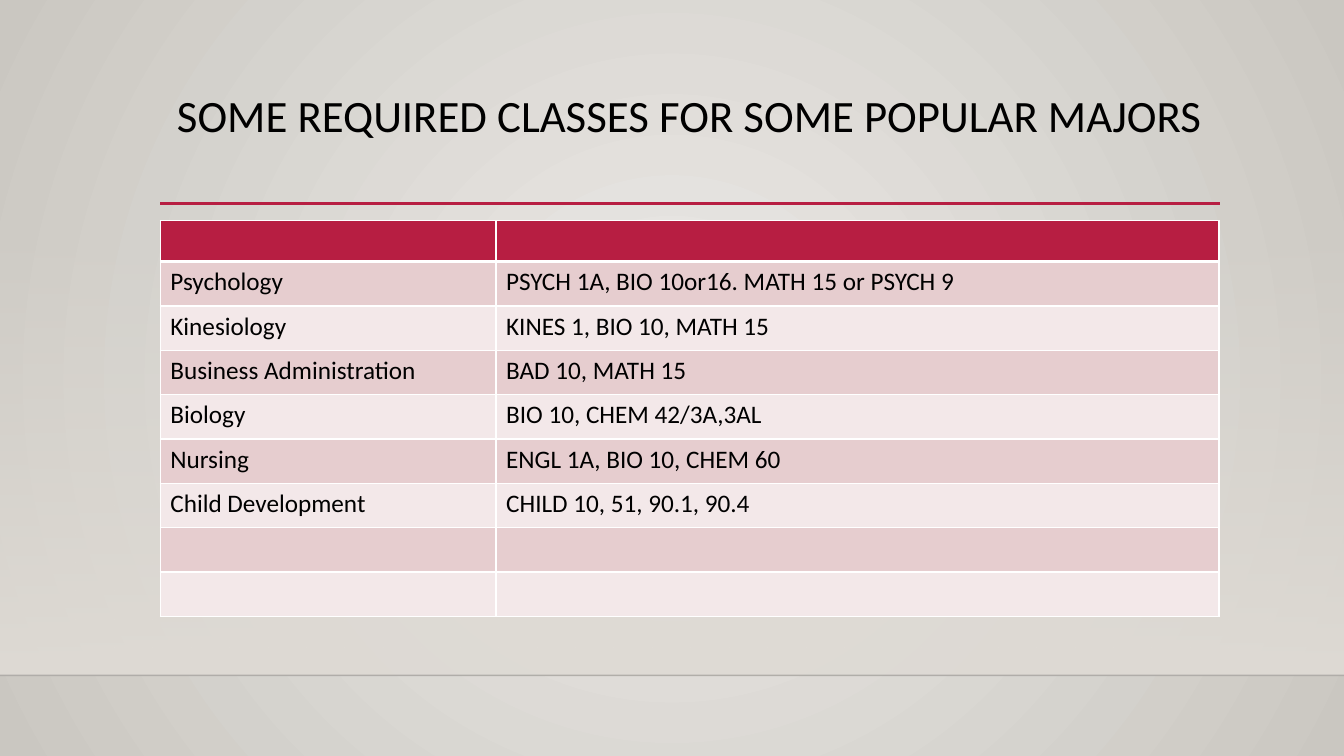
from lxml import etree
from pptx import Presentation
from pptx.dml.color import RGBColor
from pptx.enum import shapes, text
from pptx.oxml import ns
from pptx.util import Inches, Pt

BLACK = RGBColor(0, 0, 0)
INK = RGBColor(0, 0, 1)
WHITE = RGBColor(255, 255, 255)
RED = RGBColor(0xB7, 0x1E, 0x42)
PINK = RGBColor(0xE6, 0xCD, 0xCF)
PALE = RGBColor(0xF3, 0xE8, 0xE9)
SAND = RGBColor(0xDF, 0xDB, 0xD5)
LIGHT = RGBColor(0xEC, 0xEA, 0xE7)
DARK = RGBColor(0xCA, 0xC7, 0xC1)
FONT = {"name": "Calibri", "size": Pt(18), "bold": False}

ROWS = [
    ("", ""),
    ("Psychology", "PSYCH 1A, BIO 10or16. MATH 15 or PSYCH 9"),
    ("Kinesiology", "KINES 1, BIO 10, MATH 15"),
    ("Business Administration", "BAD 10, MATH 15"),
    ("Biology", "BIO 10, CHEM 42/3A,3AL"),
    ("Nursing", "ENGL 1A, BIO 10, CHEM 60"),
    ("Child Development", "CHILD 10, 51, 90.1, 90.4"),
    ("", ""),
    ("", ""),
]


def add(parent, tag, **attrs):
    return etree.SubElement(parent, ns.qn(tag), attrs)


def style(font, color, **more):
    for key, value in {**FONT, **more}.items():
        setattr(font, key, value)
    font.color.rgb = color


prs = Presentation()
prs.slide_width, prs.slide_height = Inches(13.33), Inches(7.5)
slide = prs.slides.add_slide(prs.slide_layouts[5])

# Background: radial gradient
back = slide.background.fill
back.gradient()
for stop, color in zip(back.gradient_stops, (LIGHT, DARK)):
    stop.color.rgb = color
grad = slide.element.find(".//" + ns.qn("a:gradFill"))
grad.remove(grad.find(ns.qn("a:lin")))
ring = add(grad, "a:path", path="circle")
add(ring, "a:fillToRect", l="50000", t="50000", r="50000", b="50000")

# Wall that fades in toward the floor
wall = slide.shapes.add_shape(shapes.MSO_SHAPE.RECTANGLE, 0, Inches(2.21),
                              Inches(13.33), Inches(4.49))
wall.shadow.inherit = False
wall.line.fill.background()
wall.fill.gradient()
wall.fill.gradient_angle = 270
for stop in wall.fill.gradient_stops:
    stop.color.rgb = SAND
add(wall.element.find(".//" + ns.qn("a:srgbClr")), "a:alpha", val="0")

# Floor edge and title rule
for left, right, top, color, width, alpha in [
        (0, 13.33, 6.7, INK, 1, "20000"),
        (1.59, 12.1, 2.02, RED, 2.5, "100000")]:
    rule = slide.shapes.add_connector(
        shapes.MSO_CONNECTOR.STRAIGHT,
        Inches(left), Inches(top), Inches(right), Inches(top))
    rule.line.color.rgb = color
    rule.line.width = Pt(width)
    add(rule.element.find(".//" + ns.qn("a:srgbClr")), "a:alpha", val=alpha)
    add(rule.element.spPr, "a:effectLst")

# Title
title = slide.shapes.title
title.left, title.top = Inches(1.59), Inches(0.88)
title.width, title.height = Inches(10.5), Inches(1.15)
frame = title.text_frame
frame.text = "SOME REQUIRED CLASSES FOR SOME POPULAR MAJORS"
frame.vertical_anchor = text.MSO_ANCHOR.TOP
frame.word_wrap = True
para = frame.paragraphs[0]
para.alignment = text.PP_ALIGN.CENTER
para.line_spacing = 0.9
style(para.runs[0].font, BLACK, size=Pt(32))

# Table of majors and classes
table = slide.shapes.add_table(len(ROWS), 2, Inches(1.59), Inches(2.19),
                               Inches(10.5), Inches(3.92)).table
for col, width in zip(table.columns, (3.33, 7.17)):
    col.width = Inches(width)
for r, words in enumerate(ROWS):
    table.rows[r].height = Inches(0.44 if r else 0.4)
    for c, word in enumerate(words):
        cell = table.cell(r, c)
        cell.text = word
        style(cell.text_frame.paragraphs[0].font, BLACK)
        props = cell._tc.get_or_add_tcPr()
        for side in "LRTB":
            thick = (r, side) in ((0, "B"), (1, "T"))
            edge = add(props, "a:ln" + side, w=str(Pt(3 if thick else 1)))
            add(add(edge, "a:solidFill"), "a:srgbClr", val=str(WHITE))
        cell.fill.solid()
        cell.fill.fore_color.rgb = (PINK if r % 2 else PALE) if r else RED

prs.save("out.pptx")
